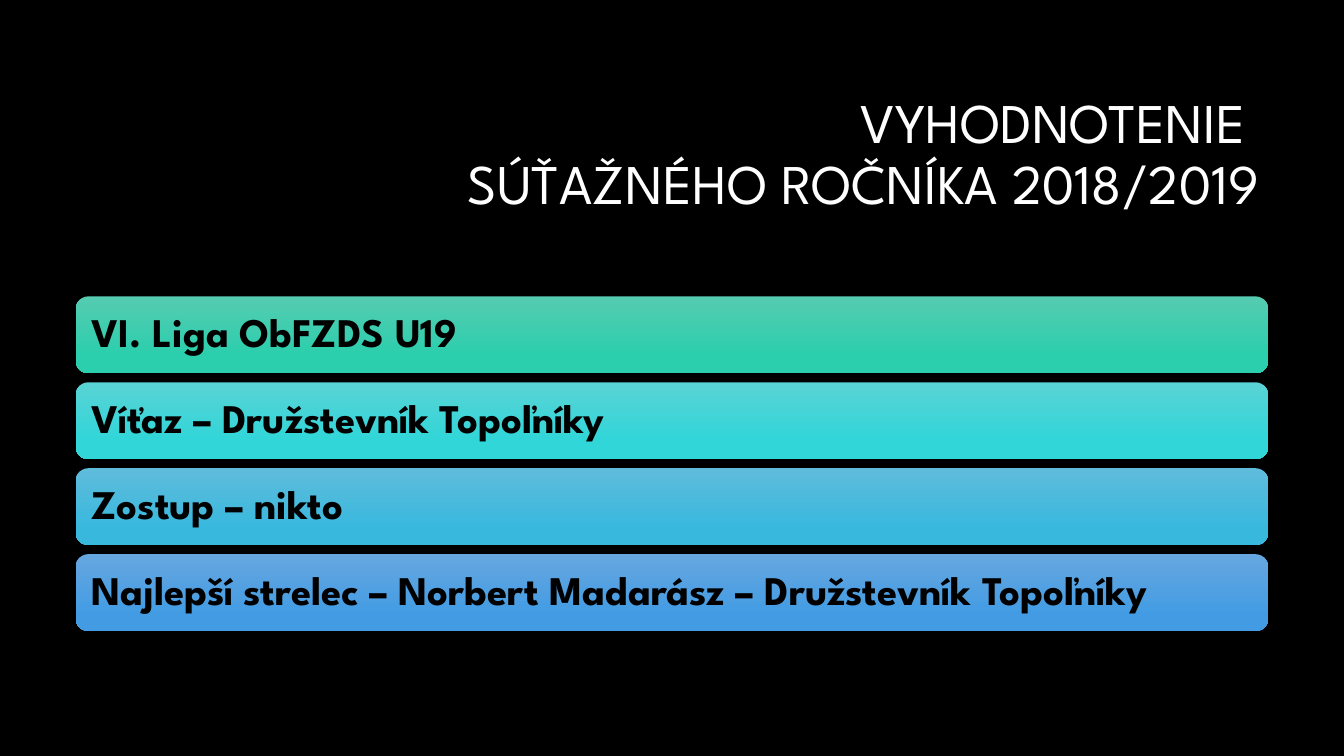
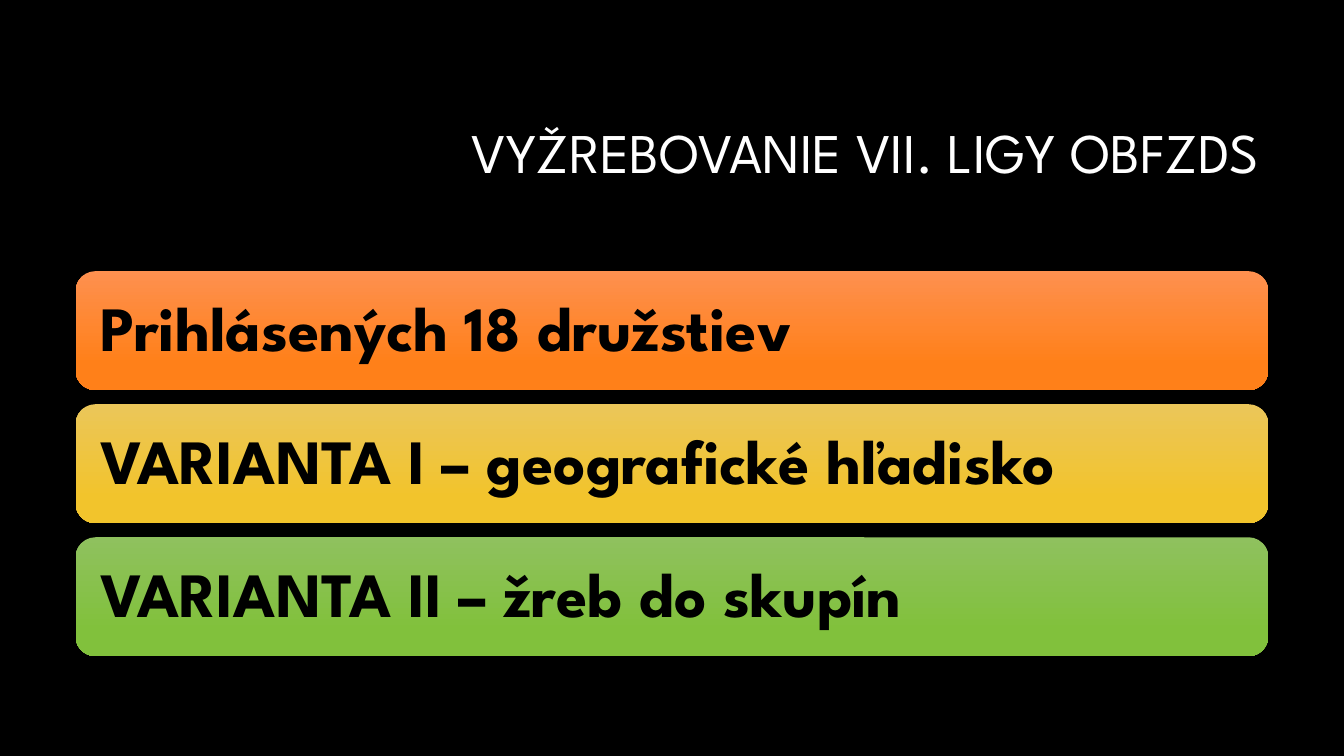
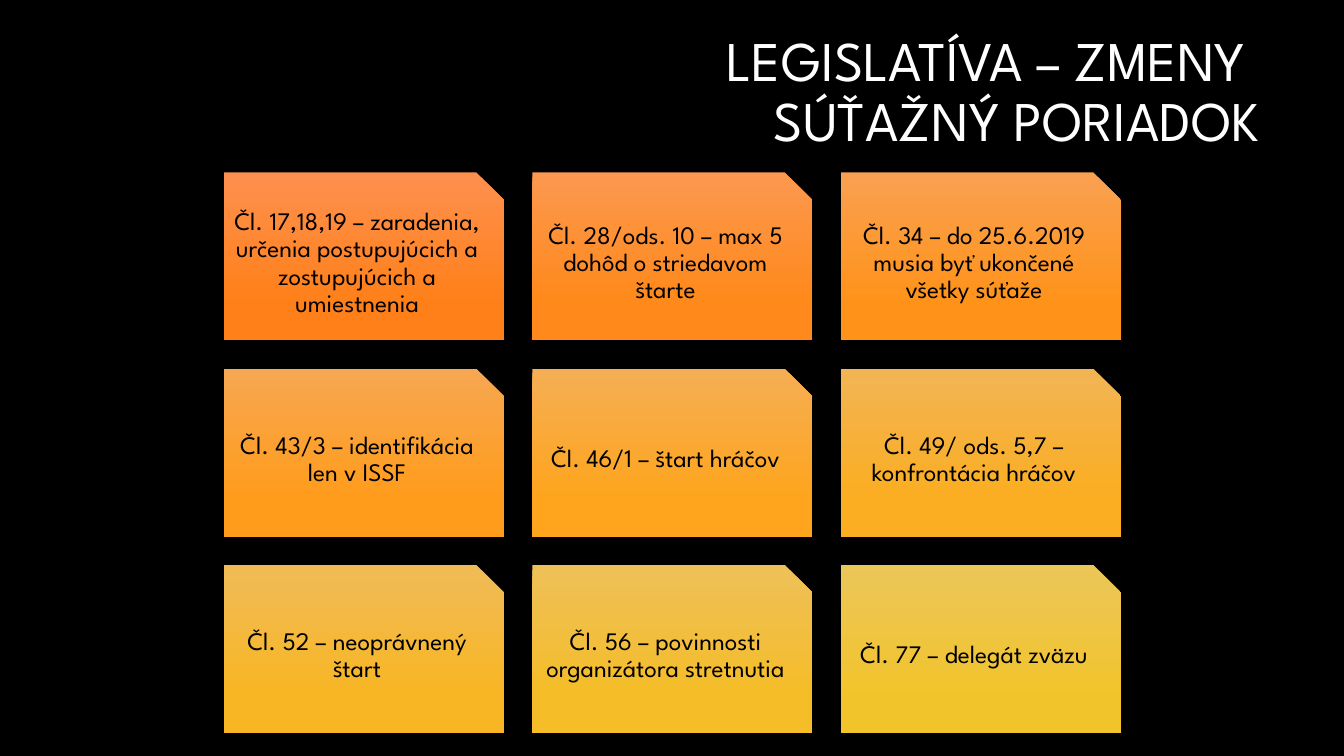
import pptx
import pptx.util
import pptx.dml.color
import pptx.enum.shapes
import pptx.enum.text

Inch = pptx.util.Inches
Shape = pptx.enum.shapes.MSO_SHAPE
Align = pptx.enum.text.PP_ALIGN
Anchor = pptx.enum.text.MSO_ANCHOR

WIDE, HIGH = 13.33, 7.5
FONT = "League Spartan"
HUES = {"back": "000000", "title": "FFFFFF", "text": "000000"}
TITLE = {"left": 3.17, "top": 0.84, "wide": 9.42, "high": 1.41, "size": 40}
FADE_END = 0.78

# Styles: area is left, top, width, height; gap separates the cells.
BAR = {"form": Shape.ROUNDED_RECTANGLE, "cols": 1, "bold": True, "align": Align.LEFT}
CARD = {"form": Shape.SNIP_1_RECTANGLE, "cols": 3, "bold": False, "align": Align.CENTER}

# Cells: text, upper colour, lower colour.
SLIDES = [
    {
        "title": ["VYHODNOTENIE ", "SÚŤAŽNÉHO ROČNÍKA 2018/2019"],
        "style": {**BAR, "area": (0.75, 2.94, 11.83, 3.32), "gap": 0.09, "size": 29, "inset": 0.12},
        "cells": [
            ("VI. Liga ObFZDS U19", "55CCB1", "2BCEAD"),
            ("Víťaz – Družstevník Topoľníky", "59D3D5", "30D6D8"),
            ("Zostup – nikto", "5FBCDB", "39B8DE"),
            ("Najlepší strelec – Norbert Madarász – Družstevník Topoľníky", "66A7E0", "439CE3"),
        ],
    },
    {
        "title": ["VYŽREBOVANIE VII. LIGY OBFZDS"],
        "style": {**BAR, "area": (0.75, 2.69, 11.83, 3.82), "gap": 0.14, "size": 45, "inset": 0.19},
        "cells": [
            ("Prihlásených 18 družstiev", "FE904F", "FF8019"),
            ("VARIANTA I – geografické hľadisko", "EBC659", "F2C42C"),
            ("VARIANTA II – žreb do skupín", "8FC15E", "81C13C"),
        ],
    },
    {
        "title": ["LEGISLATÍVA – ZMENY ", "SÚŤAŽNÝ PORIADOK"],
        "top": 0.22,
        "style": {**CARD, "area": (2.22, 1.71, 8.9, 5.56), "gap": 0.28, "size": 18, "inset": 0.07},
        "cells": [
            ("Čl. 17,18,19 – zaradenia, určenia postupujúcich a zostupujúcich a umiestnenia",
             "FE904F", "FF8019"),
            ("Čl. 28/ods. 10 – max 5 dohôd o striedavom štarte", "FC9850", "FF891A"),
            ("Čl. 34 – do 25.6.2019 musia byť ukončené všetky súťaže", "F9A051", "FF931A"),
            ("Čl. 43/3 – identifikácia len v ISSF", "F7A752", "FF9C1B"),
            ("Čl. 46/1 – štart hráčov", "F5AE53", "FEA51D"),
            ("Čl. 49/ ods. 5,7 – konfrontácia hráčov", "F2B455", "FBAE21"),
            ("Čl. 52 – neoprávnený štart", "F0BB56", "F8B625"),
            ("Čl. 56 – povinnosti organizátora stretnutia", "EEC058", "F5BD28"),
            ("Čl. 77 – delegát zväzu", "EBC659", "F2C42C"),
        ],
    },
]


def rgb(code):
    return pptx.dml.color.RGBColor.from_string(code)


def write(frame, lines, size, hue, align, bold=False):
    """Fill a frame with one paragraph, its lines parted by line breaks."""
    frame.word_wrap = True
    frame.auto_size = pptx.enum.text.MSO_AUTO_SIZE.NONE
    frame.vertical_anchor = Anchor.MIDDLE
    para = frame.paragraphs[0]
    para.alignment = align
    para.line_spacing = 0.9
    for num, line in enumerate(lines):
        if num:
            para.add_line_break()
        run = para.add_run()
        run.text = line
        run.font.name = FONT
        run.font.size = pptx.util.Pt(size)
        run.font.bold = bold
        run.font.color.rgb = rgb(hue)


def add_title(slide, lines, top):
    title = slide.shapes.title
    title.left, title.top = Inch(TITLE["left"]), Inch(top)
    title.width, title.height = Inch(TITLE["wide"]), Inch(TITLE["high"])
    write(title.text_frame, lines, TITLE["size"], HUES["title"], Align.RIGHT)


def add_cell(slide, box, style, text, hues):
    cell = slide.shapes.add_shape(style["form"], *map(Inch, box))
    cell.shadow.inherit = False
    cell.line.fill.background()
    cell.fill.gradient()
    cell.fill.gradient_angle = 270
    for stop, hue, place in zip(cell.fill.gradient_stops, hues, (0, FADE_END)):
        stop.color.rgb = rgb(hue)
        stop.position = place
    frame = cell.text_frame
    inset = Inch(style["inset"])
    frame.margin_left = frame.margin_right = inset
    frame.margin_top = frame.margin_bottom = inset
    write(frame, [text], style["size"], HUES["text"], style["align"], style["bold"])


def add_grid(slide, style, cells):
    left, top, wide, high = style["area"]
    cols, gap = style["cols"], style["gap"]
    rows = len(cells) // cols
    cell_w = (wide - gap * (cols - 1)) / cols
    cell_h = (high - gap * (rows - 1)) / rows
    for num, (text, *hues) in enumerate(cells):
        row, col = divmod(num, cols)
        box = (left + col * (cell_w + gap), top + row * (cell_h + gap), cell_w, cell_h)
        add_cell(slide, box, style, text, hues)


def main():
    deck = pptx.Presentation()
    deck.slide_width, deck.slide_height = Inch(WIDE), Inch(HIGH)
    back = deck.slide_master.background.fill
    back.solid()
    back.fore_color.rgb = rgb(HUES["back"])
    layout = deck.slide_layouts.get_by_name("Title Only")
    for item in SLIDES:
        slide = deck.slides.add_slide(layout)
        add_title(slide, item["title"], item.get("top", TITLE["top"]))
        add_grid(slide, item["style"], item["cells"])
    deck.save("out.pptx")


if __name__ == "__main__":
    main()
